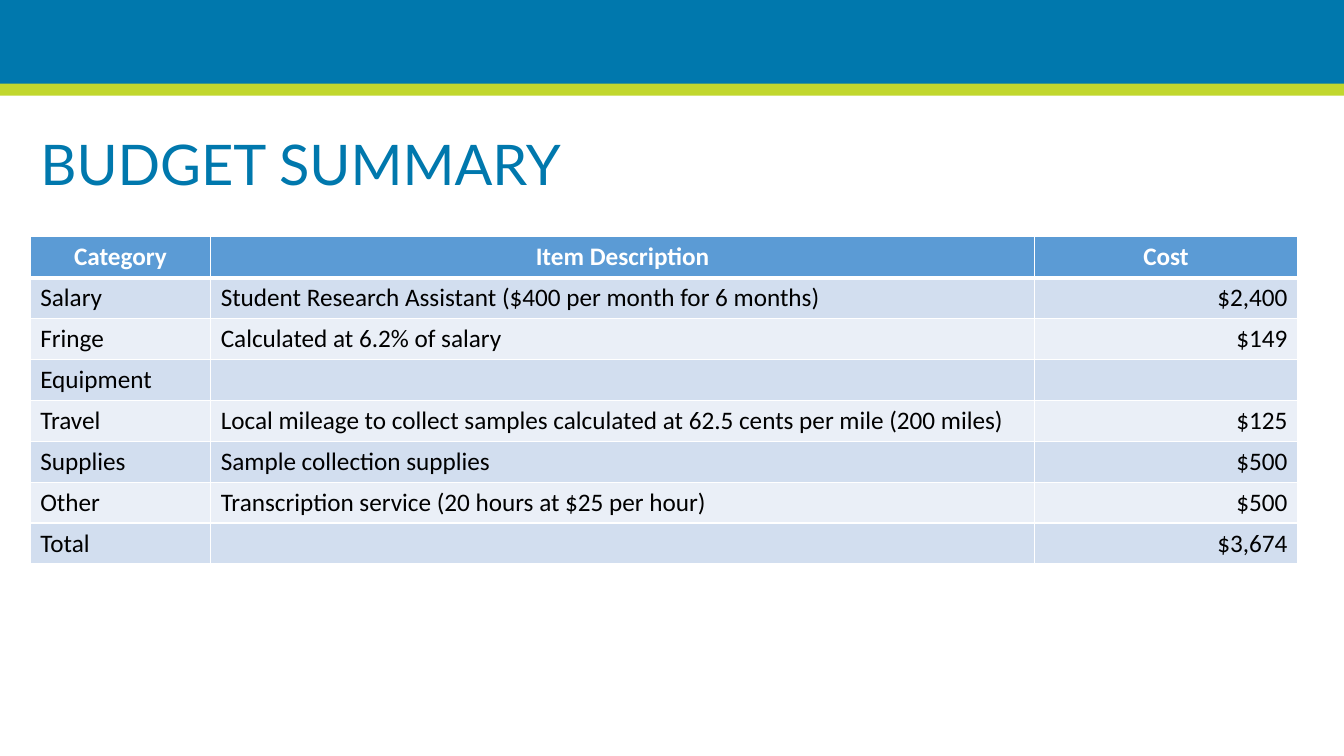
from lxml import etree
from pptx import Presentation
from pptx.dml.color import RGBColor
from pptx.enum import shapes, text
from pptx.oxml import ns
from pptx.util import Inches, Pt

TITLE = "BUDGET SUMMARY"
BUDGET = [
    ("Category", "Item Description", "Cost"),
    ("Salary", "Student Research Assistant ($400 per month for 6 months)", "$2,400"),
    ("Fringe", "Calculated at 6.2% of salary", "$149"),
    ("Equipment", "", ""),
    ("Travel", "Local mileage to collect samples calculated at 62.5 cents per mile (200 miles)", "$125"),
    ("Supplies", "Sample collection supplies", "$500"),
    ("Other", "Transcription service (20 hours at $25 per hour)", "$500"),
    ("Total", "", "$3,674"),
]
COLUMN_WIDTHS = (1.79, 8.17, 2.61)
COLUMN_ALIGNS = (text.PP_ALIGN.LEFT, text.PP_ALIGN.LEFT, text.PP_ALIGN.RIGHT)
ROW_HEIGHT = 0.405
BANDS = [(0, 0.85, "0078AD"), (0.83, 0.12, "C1D72E")]
HEADER_FILL = "5B9BD5"
ROW_FILLS = ("EAEFF7", "D2DEEF")
BLUE, WHITE, BLACK = "0078AD", "FFFFFF", "000000"


def color(value):
    return RGBColor.from_string(value)


def set_font(para, name, size, value, bold=False):
    para.font.name = name
    para.font.size = Pt(size)
    para.font.bold = bold
    para.font.color.rgb = color(value)


def add_band(page, top, height, value):
    band = page.shapes.add_shape(
        shapes.MSO_SHAPE.RECTANGLE, 0, Inches(top), deck.slide_width, Inches(height))
    band.shadow.inherit = False
    band.fill.solid()
    band.fill.fore_color.rgb = color(value)
    band.line.fill.background()


def add_borders(cell, top, bottom):
    properties = cell._tc.get_or_add_tcPr()
    for side, width in (("L", 1), ("R", 1), ("T", top), ("B", bottom)):
        line = etree.SubElement(properties, ns.qn(f"a:ln{side}"), w=str(Pt(width)))
        fill = etree.SubElement(line, ns.qn("a:solidFill"))
        etree.SubElement(fill, ns.qn("a:srgbClr"), val=WHITE)


def add_title(page):
    title = page.shapes.title
    title.left, title.top = Inches(0.3), Inches(1.2)
    title.width, title.height = Inches(6.6), Inches(0.92)
    frame = title.text_frame
    frame.text = TITLE
    frame.word_wrap = True
    frame.vertical_anchor = text.MSO_ANCHOR.MIDDLE
    para = frame.paragraphs[0]
    para.alignment = text.PP_ALIGN.LEFT
    para.line_spacing = 0.9
    set_font(para, "Lato", 40, BLUE)


def add_budget(page):
    table = page.shapes.add_table(
        len(BUDGET), len(COLUMN_WIDTHS), Inches(0.3), Inches(2.35),
        Inches(sum(COLUMN_WIDTHS)), Inches(ROW_HEIGHT * len(BUDGET))).table
    for column, width in zip(table.columns, COLUMN_WIDTHS):
        column.width = Inches(width)
    for row, entries in enumerate(BUDGET):
        header = row == 0
        table.rows[row].height = Inches(ROW_HEIGHT)
        for column, entry in enumerate(entries):
            cell = table.cell(row, column)
            add_borders(cell, 3 if row == 1 else 1, 3 if header else 1)
            cell.fill.solid()
            cell.fill.fore_color.rgb = color(HEADER_FILL if header else ROW_FILLS[row % 2])
            cell.text = entry
            para = cell.text_frame.paragraphs[0]
            para.alignment = text.PP_ALIGN.CENTER if header else COLUMN_ALIGNS[column]
            set_font(para, "Calibri", 18, WHITE if header else BLACK, header)


deck = Presentation()
deck.slide_width, deck.slide_height = Inches(13.33), Inches(7.5)
page = deck.slides.add_slide(deck.slide_layouts[5])
for band in BANDS:
    add_band(page, *band)
add_title(page)
add_budget(page)
deck.save("out.pptx")
